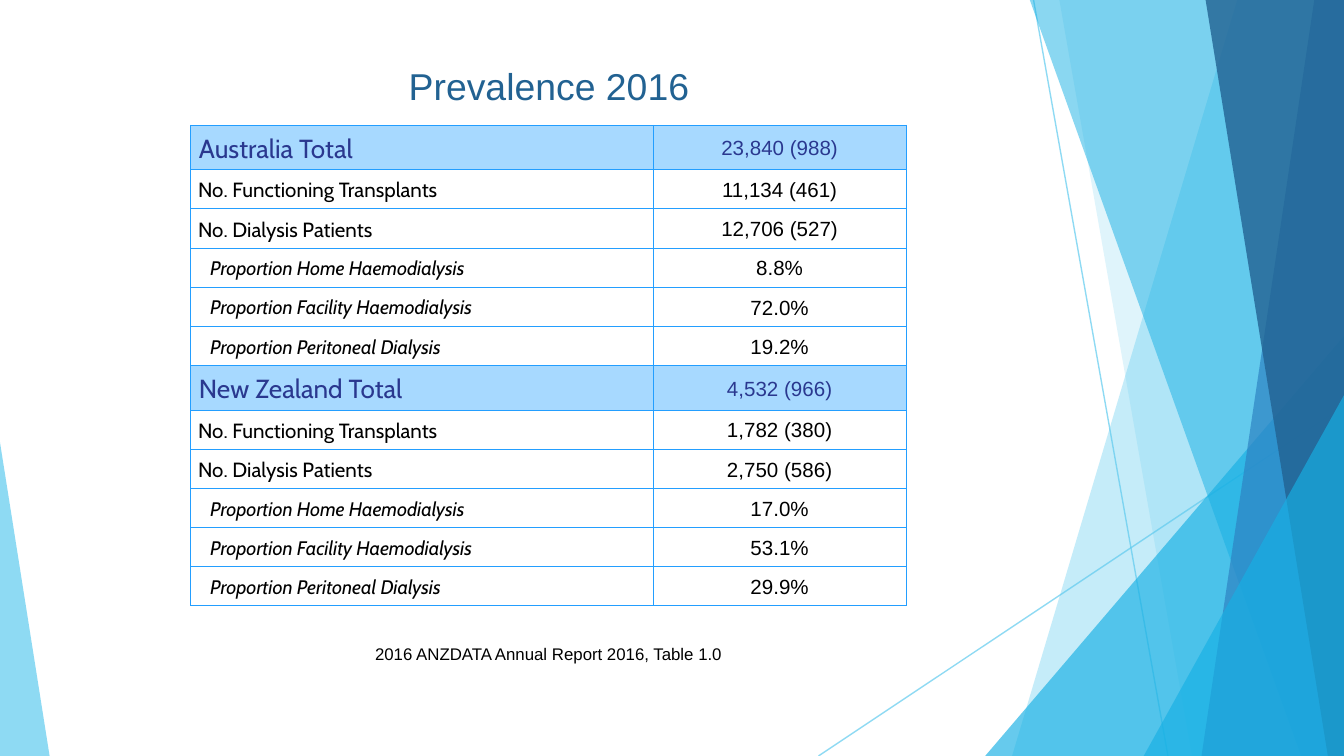
import pptx
import pptx.dml.color
import pptx.enum.shapes
import pptx.enum.text
import pptx.oxml
import pptx.oxml.ns
import pptx.util

Pt = pptx.util.Pt
RGBColor = pptx.dml.color.RGBColor
SHAPE = pptx.enum.shapes.MSO_SHAPE
ALIGN = pptx.enum.text.PP_ALIGN
ANCHOR = pptx.enum.text.MSO_ANCHOR
qn = pptx.oxml.ns.qn

WIDTH, HEIGHT = 720, 405
TOP = -0.6  # the ribbons start just above the page

SKY = RGBColor(0x5F, 0xCB, 0xEF)
CYAN = RGBColor(0x17, 0xB0, 0xE4)
BLUE = RGBColor(0x2E, 0x83, 0xC3)
NAVY = RGBColor(0x22, 0x62, 0x92)
INDIGO = RGBColor(0x2A, 0x38, 0x8F)
PALE = RGBColor(0xA7, 0xD9, 0xFF)
BORDER = RGBColor(0x23, 0x9E, 0xFF)
BLACK = RGBColor(0, 0, 0)

# Row kinds: label size, label colour, italic, indent, row height, fill
ROW_STYLES = {
    "total": (14, INDIGO, False, 4.5, 23.85, PALE),
    "count": (11, BLACK, False, 4, 21, None),
    "share": (10.5, BLACK, True, 10.5, 21, None),
}
ROW_LABELS = [
    ("count", "No. Functioning Transplants"),
    ("count", "No. Dialysis Patients"),
    ("share", "Proportion Home Haemodialysis"),
    ("share", "Proportion Facility Haemodialysis"),
    ("share", "Proportion Peritoneal Dialysis"),
]
COUNTRIES = {
    "Australia Total": ["23,840 (988)", "11,134 (461)", "12,706 (527)",
                        "8.8%", "72.0%", "19.2%"],
    "New Zealand Total": ["4,532 (966)", "1,782 (380)", "2,750 (586)",
                          "17.0%", "53.1%", "29.9%"],
}


class SlideBuilder:
    """Holds the style and the current page."""

    value_font = "Arial"
    label_font = "Cabin"

    def __init__(self, page):
        self.page = page
        self.shapes = page.shapes

    def set_alpha(self, element, percent):
        for color in element.iter(qn("a:srgbClr")):
            color.append(pptx.oxml.parse_xml(
                f'<a:alpha {pptx.oxml.ns.nsdecls("a")} val="{percent * 1000}"/>'))

    def paint(self, shape, color, alpha):
        shape.shadow.inherit = False
        shape.fill.solid()
        shape.fill.fore_color.rgb = color
        shape.line.fill.background()
        self.set_alpha(shape.fill._xPr, alpha)

    def line(self, start, end, color, alpha):
        line = self.shapes.add_connector(
            pptx.enum.shapes.MSO_CONNECTOR.STRAIGHT,
            *(Pt(value) for value in start + end))
        line.line.color.rgb = color
        line.line.width = Pt(0.75)
        properties = line._element.spPr
        self.set_alpha(properties, alpha)
        properties.append(pptx.oxml.parse_xml(
            f'<a:effectLst {pptx.oxml.ns.nsdecls("a")}/>'))

    def ribbon(self, top_left, bottom_left, color, alpha):
        """Band from a slanted left edge to the right edge of the page."""
        outline = self.shapes.build_freeform(Pt(top_left), Pt(TOP), scale=1.0)
        corners = [(WIDTH, TOP), (WIDTH, HEIGHT), (bottom_left, HEIGHT)]
        outline.add_line_segments([(Pt(x), Pt(y)) for x, y in corners], close=True)
        self.paint(outline.convert_to_shape(), color, alpha)

    def triangle(self, left, top, width, apex, color, alpha):
        """Triangle that stands on the bottom edge of the page."""
        shape = self.shapes.add_shape(
            SHAPE.ISOSCELES_TRIANGLE, Pt(left), Pt(top), Pt(width), Pt(HEIGHT - top))
        shape.adjustments[0] = apex
        self.paint(shape, color, alpha)

    def add_span(self, para, text, font, size, color, italic=False):
        span = para.add_run()
        span.text = text
        span.font.name = font
        span.font.size = Pt(size)
        span.font.italic = italic
        span.font.color.rgb = color

    def text(self, left, top, width, height, text, size, color):
        box = self.shapes.add_textbox(Pt(left), Pt(top), Pt(width), Pt(height))
        box.text_frame.word_wrap = True
        para = box.text_frame.paragraphs[0]
        para.alignment = ALIGN.CENTER
        self.add_span(para, text, self.value_font, size, color)

    def cell(self, cell, indent, fill):
        """Style a cell and return its paragraph."""
        cell.margin_left = Pt(indent)
        cell.margin_right = cell.margin_top = cell.margin_bottom = Pt(1.5)
        cell.vertical_anchor = ANCHOR.MIDDLE
        for side in ("lnL", "lnR", "lnT", "lnB"):
            cell._tc.get_or_add_tcPr().append(pptx.oxml.parse_xml(
                f'<a:{side} {pptx.oxml.ns.nsdecls("a")} w="{Pt(0.5)}"><a:solidFill>'
                f'<a:srgbClr val="{BORDER}"/></a:solidFill></a:{side}>'))
        if fill is None:
            cell.fill.background()
        else:
            cell.fill.solid()
            cell.fill.fore_color.rgb = fill
        para = cell.text_frame.paragraphs[0]
        para.line_spacing = 1.1
        return para

    def table(self, left, top, widths, rows):
        height = sum(ROW_STYLES[kind][4] for kind, _, _ in rows)
        table = self.shapes.add_table(
            len(rows), len(widths), Pt(left), Pt(top), Pt(sum(widths)), Pt(height)).table
        table.first_row = table.horz_banding = False
        for column, width in zip(table.columns, widths):
            column.width = Pt(width)
        for index, (kind, label, value) in enumerate(rows):
            size, color, italic, indent, row_height, fill = ROW_STYLES[kind]
            table.rows[index].height = Pt(row_height)
            para = self.cell(table.cell(index, 0), indent, fill)
            self.add_span(para, label, self.label_font, size, color, italic)
            para = self.cell(table.cell(index, 1), 1.5, fill)
            para.alignment = ALIGN.CENTER
            para.space_after = Pt(14)
            self.add_span(para, value, self.value_font, 11, color)


def main():
    deck = pptx.Presentation()
    deck.slide_width, deck.slide_height = Pt(WIDTH), Pt(HEIGHT)
    builder = SlideBuilder(deck.slides.add_slide(deck.slide_layouts[6]))

    # Background ribbons, back to front
    builder.line((553.7, 0), (625.7, HEIGHT), SKY, 70)
    builder.line((WIDTH, 217.4), (438.5, HEIGHT), SKY, 70)
    builder.ribbon(663, 542.2, SKY, 36)
    builder.ribbon(567.4, 638.6, SKY, 20)
    builder.triangle(527.8, 180, 192.2, 1, CYAN, 66)
    builder.ribbon(551.5, 697, CYAN, 50)
    builder.ribbon(704.2, 643.7, BLUE, 70)
    builder.ribbon(645.8, 711.4, NAVY, 80)
    builder.triangle(612.7, 211.7, 107.3, 1, CYAN, 66)
    builder.triangle(0, 236.9, 26.6, 0, SKY, 70)

    # Title
    builder.text(40.3, 30.2, 507.6, 67.7, "Prevalence 2016", 20, NAVY)

    # Prevalence table
    rows = []
    for country, values in COUNTRIES.items():
        labels = [("total", country)] + ROW_LABELS
        rows += [(kind, label, value) for (kind, label), value in zip(labels, values)]
    builder.table(102.1, 67.1, [247.7, 135.8], rows)

    # Reference
    builder.text(159.1, 341.3, 269.3, 18,
                 "2016 ANZDATA Annual Report 2016, Table 1.0", 9, BLACK)

    deck.save("out.pptx")


if __name__ == "__main__":
    main()
